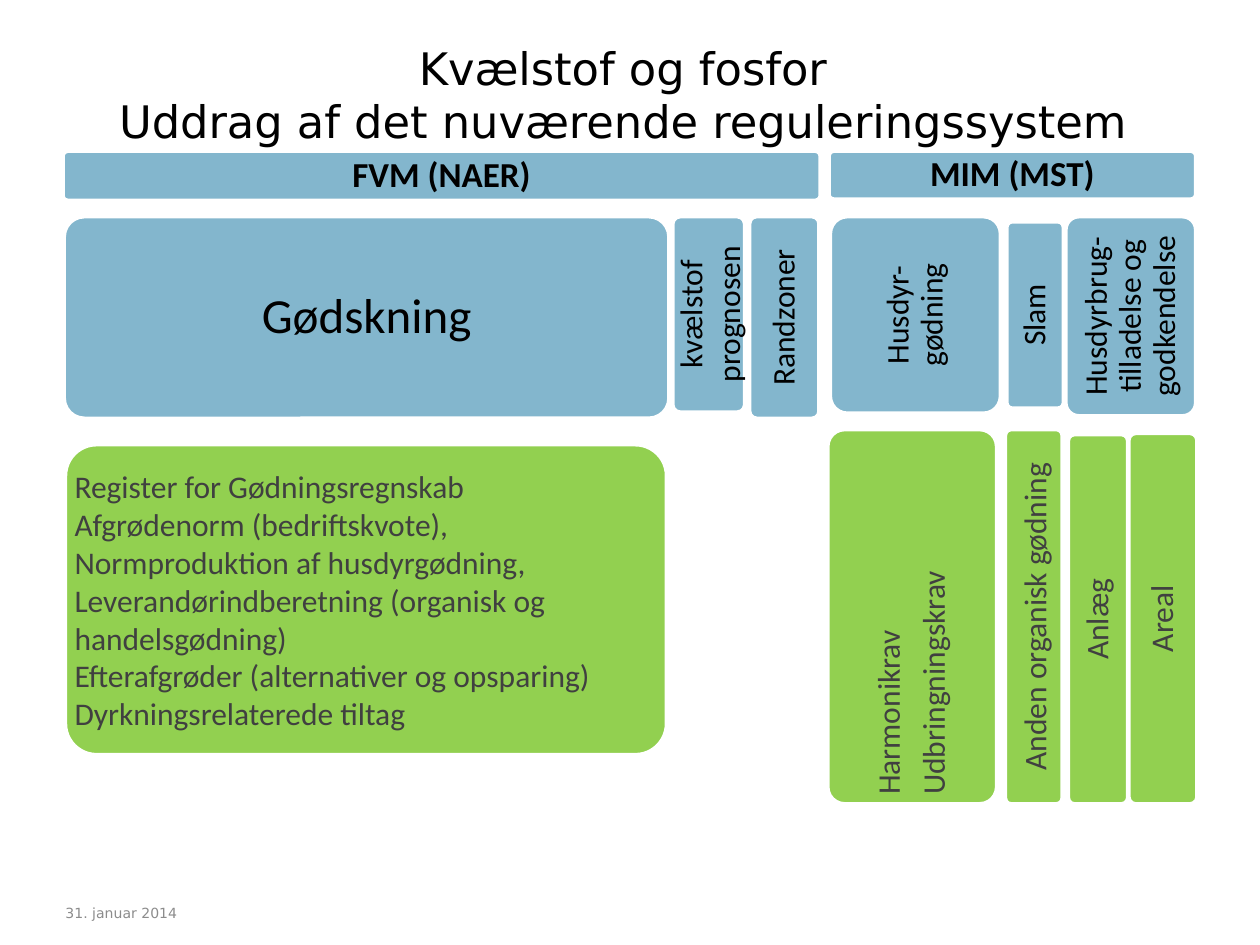
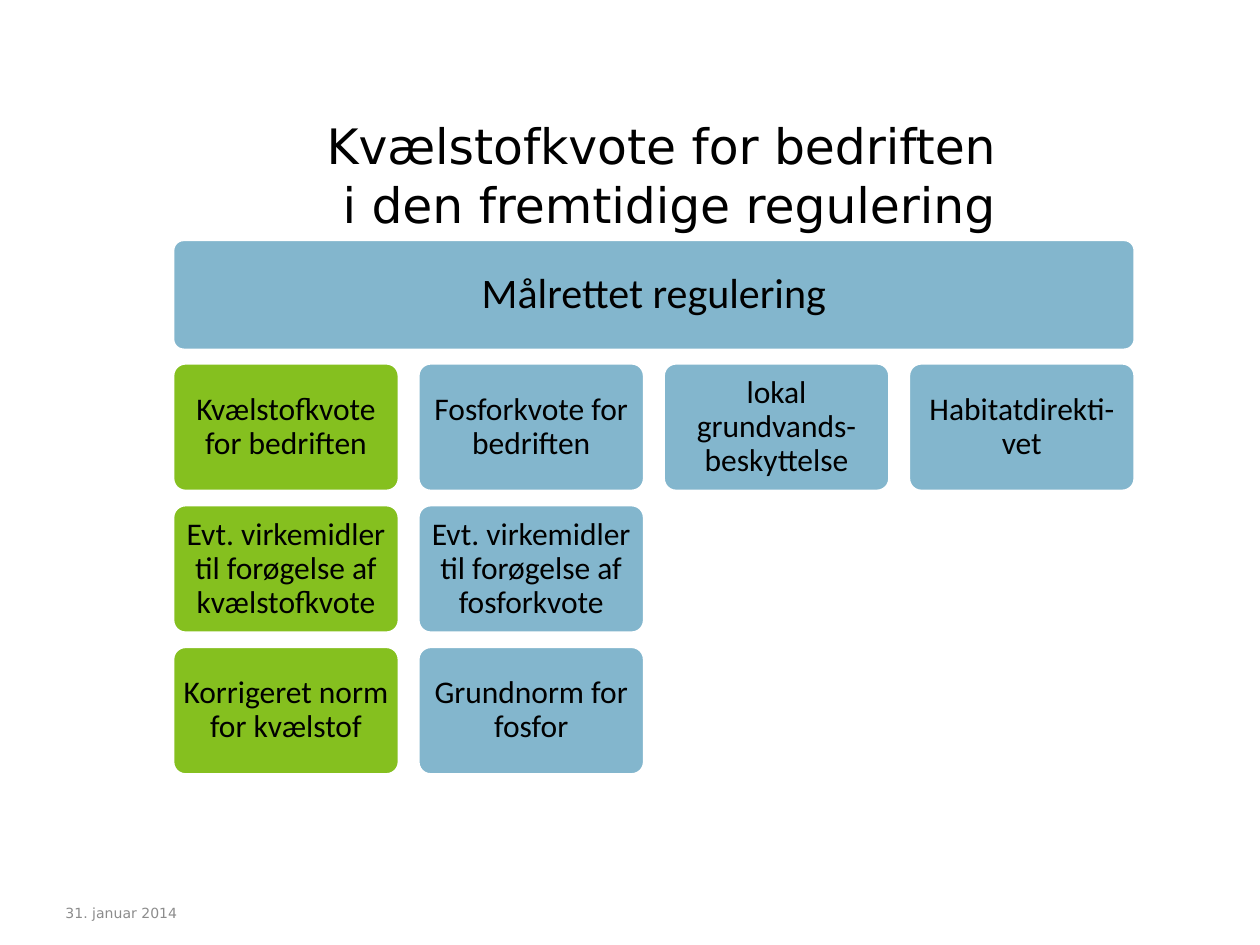
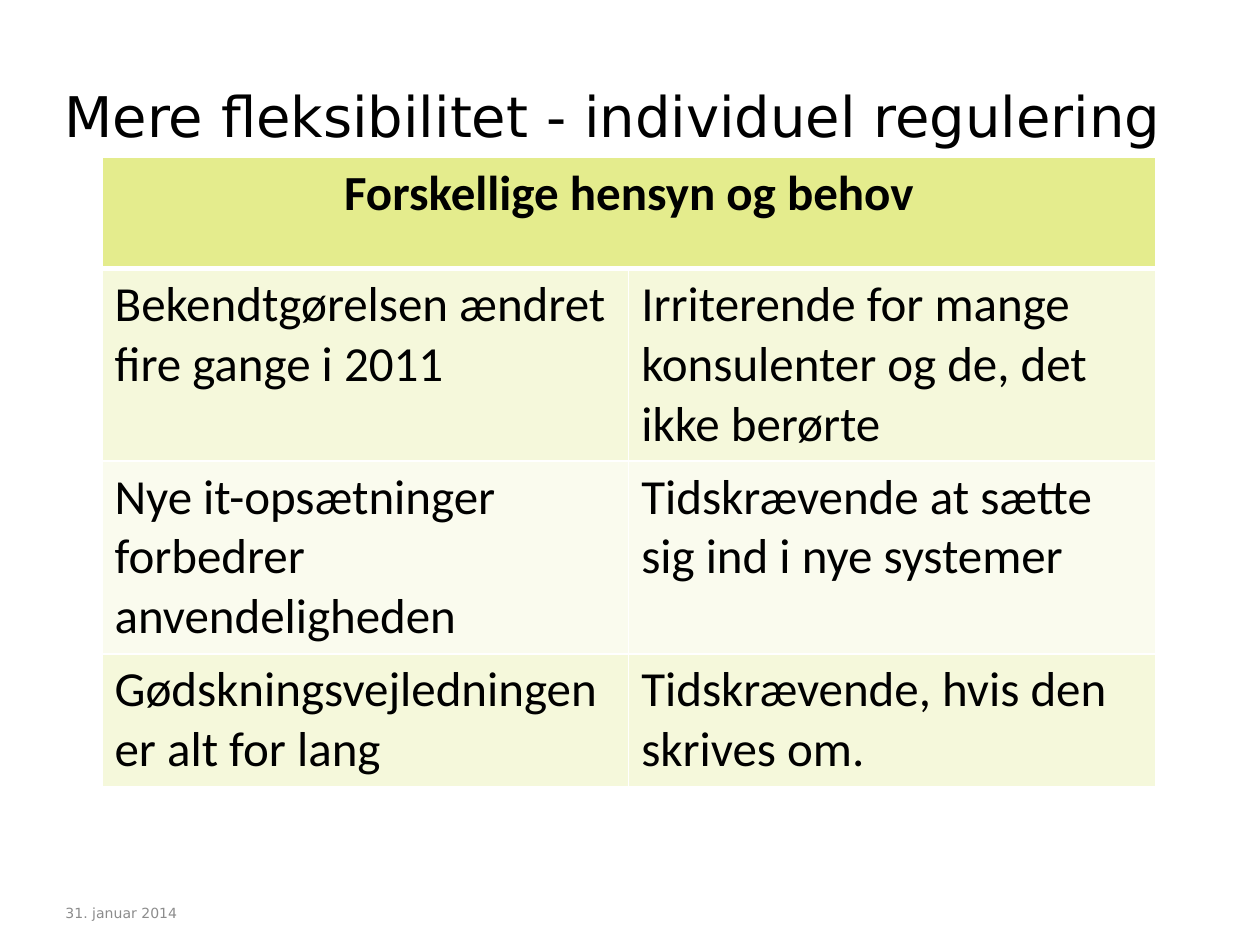
import pptx
import pptx.util
import pptx.dml.color
import pptx.enum.shapes
import pptx.enum.text
import pptx.oxml
import pptx.oxml.ns

ALIGN = pptx.enum.text.PP_ALIGN
ANCHOR = pptx.enum.text.MSO_ANCHOR
COLS, ROWS = 100, 75  # the slide's grid
CELL = pptx.util.Inches(0.1)
BLUE, LIME, GREEN = "83B6CD", "92D050", "85C01F"
BLACK, DARK, GREY, WHITE = "000000", "404040", "8C8C8C", "FFFFFF"
TABLE_HEAD, BAND_DARK, BAND_LIGHT = "E4EC8D", "F5F8DB", "FAFBEE"
TITLE_FONT, BODY_FONT = "DejaVu Sans", "Calibri"
CORNER = 0.1


def rgb(value):
    return pptx.dml.color.RGBColor.from_string(value)


def cells(*lengths):
    """Turn grid cells into EMU."""
    return [round(length * CELL) for length in lengths]


def write(tf, text, size=18, font=BODY_FONT, color=BLACK, bold=False,
          align=ALIGN.LEFT, spacing=None, after=0):
    """Fill a text frame, one paragraph per line of text."""
    for i, line in enumerate(text.split("\n")):
        p = tf.paragraphs[0] if i == 0 else tf.add_paragraph()
        p.text = line
        p.alignment = align
        p.line_spacing = spacing
        p.space_before = pptx.util.Pt(0)
        p.space_after = pptx.util.Pt(after)
        for r in p.runs:
            r.font.size = pptx.util.Pt(size)
            r.font.name = font
            r.font.bold = bold
            r.font.color.rgb = rgb(color)


def set_frame(tf, anchor, x_inset=0, y_inset=0):
    tf.word_wrap = True
    tf.auto_size = pptx.enum.text.MSO_AUTO_SIZE.NONE
    tf.vertical_anchor = anchor
    tf.margin_left = tf.margin_right = pptx.util.Inches(x_inset)
    tf.margin_top = tf.margin_bottom = pptx.util.Inches(y_inset)


def add_slide(prs, title, box, anchor=ANCHOR.TOP, insets=(0.1, 0.05), **fmt):
    """Add a slide with its title and the date in the footer."""
    slide = prs.slides.add_slide(prs.slide_layouts[5])
    sp = slide.shapes.title
    sp.left, sp.top, sp.width, sp.height = cells(*box)
    set_frame(sp.text_frame, anchor, *insets)
    write(sp.text_frame, title, font=TITLE_FONT, **fmt)

    date = slide.shapes.add_textbox(*cells(5.2, 69.9, 19.4, 5.1))
    set_frame(date.text_frame, ANCHOR.MIDDLE)
    write(date.text_frame, "31. januar 2014", size=8, font=TITLE_FONT, color=GREY)
    return slide


def add_card(slide, text, box, fill=BLUE, inset=0.07, upright=False,
             size=18, align=ALIGN.CENTER, spacing=0.9, after=None, **fmt):
    """Draw a rounded card; upright text reads from bottom to top."""
    sp = slide.shapes.add_shape(
        pptx.enum.shapes.MSO_SHAPE.ROUNDED_RECTANGLE, *cells(*box))
    sp.adjustments[0] = CORNER
    sp.shadow.inherit = False
    sp.fill.solid()
    sp.fill.fore_color.rgb = rgb(fill)
    sp.line.color.rgb = rgb(WHITE)
    sp.line.width = pptx.util.Pt(2)
    # The rounded corner already insets the text by 0.29 of its radius.
    corner_inset = 0.29 * CORNER * min(sp.width, sp.height) / pptx.util.Inches(1)
    inset = max(0, inset - corner_inset)
    set_frame(sp.text_frame, ANCHOR.MIDDLE, inset, inset)
    if upright:
        sp.text_frame._txBody.bodyPr.set("vert", "vert270")
    after = 0.35 * size if after is None else after
    write(sp.text_frame, text, size=size, align=align, spacing=spacing,
          after=after, **fmt)


def add_region(slide, origin, cards):
    """Place cards given as (text, box, format) relative to the origin."""
    x0, y0 = origin
    for text, (x, y, w, h), fmt in cards:
        add_card(slide, text, (x0 + x, y0 + y, w, h), **fmt)


def add_regulation_slide(prs):
    slide = add_slide(
        prs, "Kvælstof og fosfor \vUddrag af det nuværende reguleringssystem ",
        (5, 2.7, 90, 11.7), size=25.6, align=ALIGN.CENTER, spacing=1.0)
    head = dict(size=20, bold=True, inset=0.08)
    upright = dict(upright=True)
    detail = dict(fill=LIME, color=DARK)
    upright_detail = dict(detail, upright=True)
    plain = dict(spacing=1, after=0)
    register = "\n".join([
        "Register for Gødningsregnskab",
        "Afgrødenorm (bedriftskvote),",
        "Normproduktion af husdyrgødning,",
        "Leverandørindberetning (organisk og handelsgødning)",
        "Efterafgrøder (alternativer og opsparing)",
        "Dyrkningsrelaterede tiltag",
    ])
    add_region(slide, (5, 12), [
        ("FVM (NAER)", (0, 0, 60.1, 3.9), head),
        ("Gødskning", (0.1, 5.2, 48, 16), dict(size=28, inset=0.12)),
        (register, (0.2, 23.3, 47.7, 24.6), dict(detail, align=ALIGN.LEFT, **plain)),
        ("kvælstof\nprognosen", (48.4, 5.2, 5.7, 15.5), dict(upright, **plain)),
        ("Randzoner", (54.5, 5.2, 5.5, 16), upright),
    ])
    add_region(slide, (65.7, 12), [
        ("MIM (MST)", (0.1, 0, 29.1, 3.8), head),
        ("Husdyr-gødning", (0.2, 5.2, 13.5, 15.6), upright),
        ("Harmonikrav\nUdbringningskrav", (0, 22.1, 13.4, 29.7),
         dict(upright_detail, align=ALIGN.LEFT)),
        ("Slam", (14.2, 5.6, 4.5, 14.8), upright),
        ("Anden organisk gødning", (14.1, 22.1, 4.5, 29.7),
         dict(upright_detail, **plain)),
        ("Husdyrbrug- tilladelse og godkendelse", (18.9, 5.2, 10.3, 15.8),
         dict(upright, after=0)),
        ("Anlæg", (19.1, 22.5, 4.7, 29.3), upright_detail),
        ("Areal", (23.9, 22.4, 5.4, 29.4), upright_detail),
    ])


def add_quota_slide(prs):
    slide = add_slide(
        prs, "Kvælstofkvote for bedriften \vi den fremtidige regulering",
        (8.1, 8.7, 90, 12.5), size=27.9, align=ALIGN.CENTER, spacing=1.0)
    left, top, width = 13.7, 28.8, 76.4
    card_w, card_h, row_step = 18, 10.2, 11.25
    columns = [
        ["Kvælstofkvote for bedriften",
         "Evt. virkemidler til forøgelse af kvælstofkvote",
         "Korrigeret norm for kvælstof"],
        ["Fosforkvote for bedriften",
         "Evt. virkemidler til forøgelse af fosforkvote",
         "Grundnorm for fosfor"],
        ["lokal grundvands-beskyttelse"],
        ["Habitatdirekti-vet"],
    ]
    col_step = (width - card_w) / (len(columns) - 1)
    add_card(slide, "Målrettet regulering", (left, 19, width, 8.8),
             size=24, inset=0.1)
    for c, column in enumerate(columns):
        for r, text in enumerate(column):
            box = (left + c * col_step, top + r * row_step, card_w, card_h)
            add_card(slide, text, box, fill=BLUE if c else GREEN)


def set_borders(cell, **widths):
    """Give a cell white borders; widths in points by side (L, R, T, B)."""
    tcPr = cell._tc.get_or_add_tcPr()
    for i, side in enumerate("LRTB"):
        width = pptx.util.Pt(widths.get(side, 1))
        ns = pptx.oxml.ns.nsdecls("a")
        tcPr.insert(i, pptx.oxml.parse_xml(
            f'<a:ln{side} {ns} w="{width}"><a:solidFill>'
            f'<a:srgbClr val="{WHITE}"/></a:solidFill></a:ln{side}>'))


def add_needs_table(slide, box, row_heights, rows):
    table = slide.shapes.add_table(len(rows), 2, *cells(*box)).table
    for r, (texts, height) in enumerate(zip(rows, row_heights)):
        table.rows[r].height = cells(height)[0]
        is_head = r == 0
        fill = TABLE_HEAD if is_head else BAND_DARK if r % 2 else BAND_LIGHT
        for c in range(2):
            cell = table.cell(r, c)
            cell.fill.solid()
            cell.fill.fore_color.rgb = rgb(fill)
            set_borders(cell, B=3 if is_head else 1, T=3 if r == 1 else 1)
        for c, text in enumerate(texts):
            write(table.cell(r, c).text_frame, text, size=28, bold=is_head,
                  align=ALIGN.CENTER if is_head else ALIGN.LEFT)
    table.cell(0, 0).merge(table.cell(0, 1))


def add_flexibility_slide(prs):
    slide = add_slide(
        prs, "Mere fleksibilitet - individuel regulering",
        (5.1, 0, 89.7, 11.9), anchor=ANCHOR.BOTTOM, insets=(0, 0),
        size=32, spacing=0.9)
    add_needs_table(slide, (8.1, 12.5, 83.6, 49.9), (8.8, 15.3, 15.3, 10.5), [
        ["Forskellige hensyn og behov"],
        ["Bekendtgørelsen ændret fire gange i 2011",
         "Irriterende for mange konsulenter og de, det ikke berørte"],
        ["Nye it-opsætninger forbedrer anvendeligheden",
         "Tidskrævende at sætte sig ind i nye systemer"],
        ["Gødskningsvejledningen er alt for lang",
         "Tidskrævende, hvis den skrives om."],
    ])


def main():
    prs = pptx.Presentation()
    prs.slide_width, prs.slide_height = cells(COLS, ROWS)
    add_regulation_slide(prs)
    add_quota_slide(prs)
    add_flexibility_slide(prs)
    prs.save("out.pptx")


if __name__ == "__main__":
    main()
